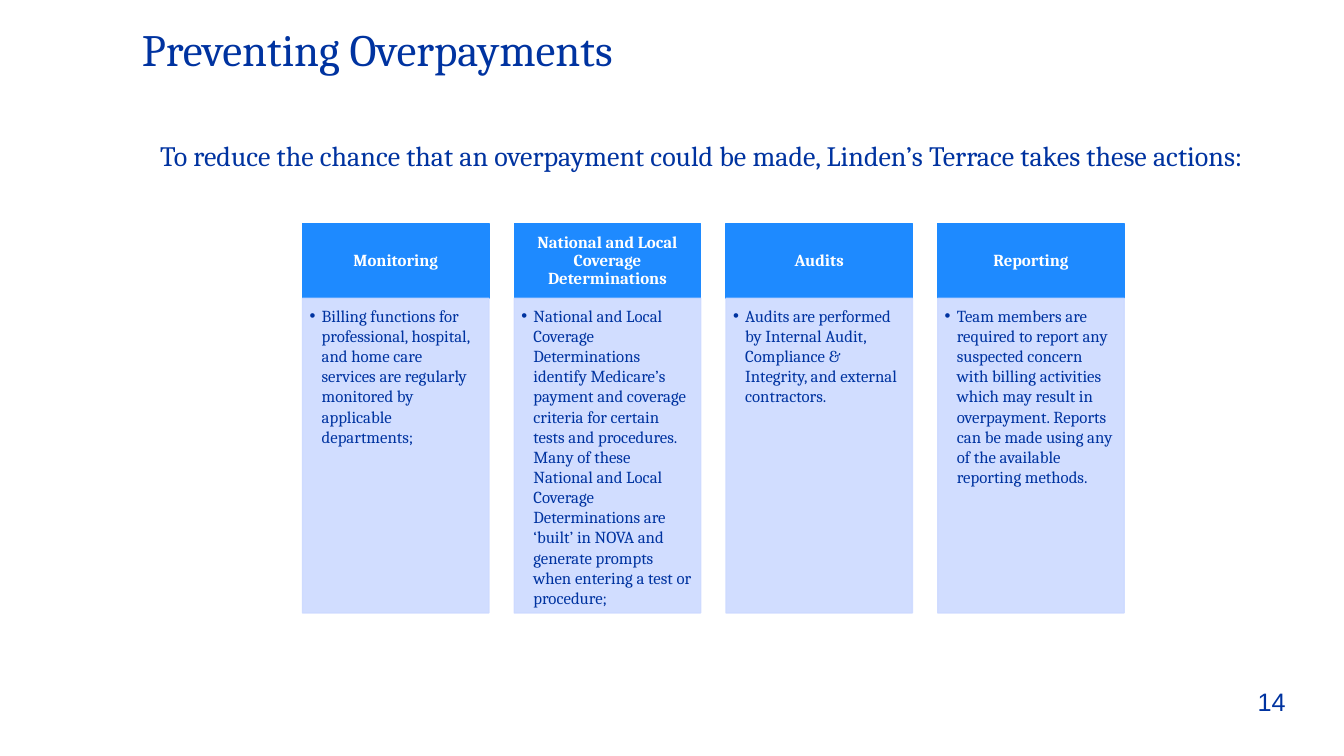
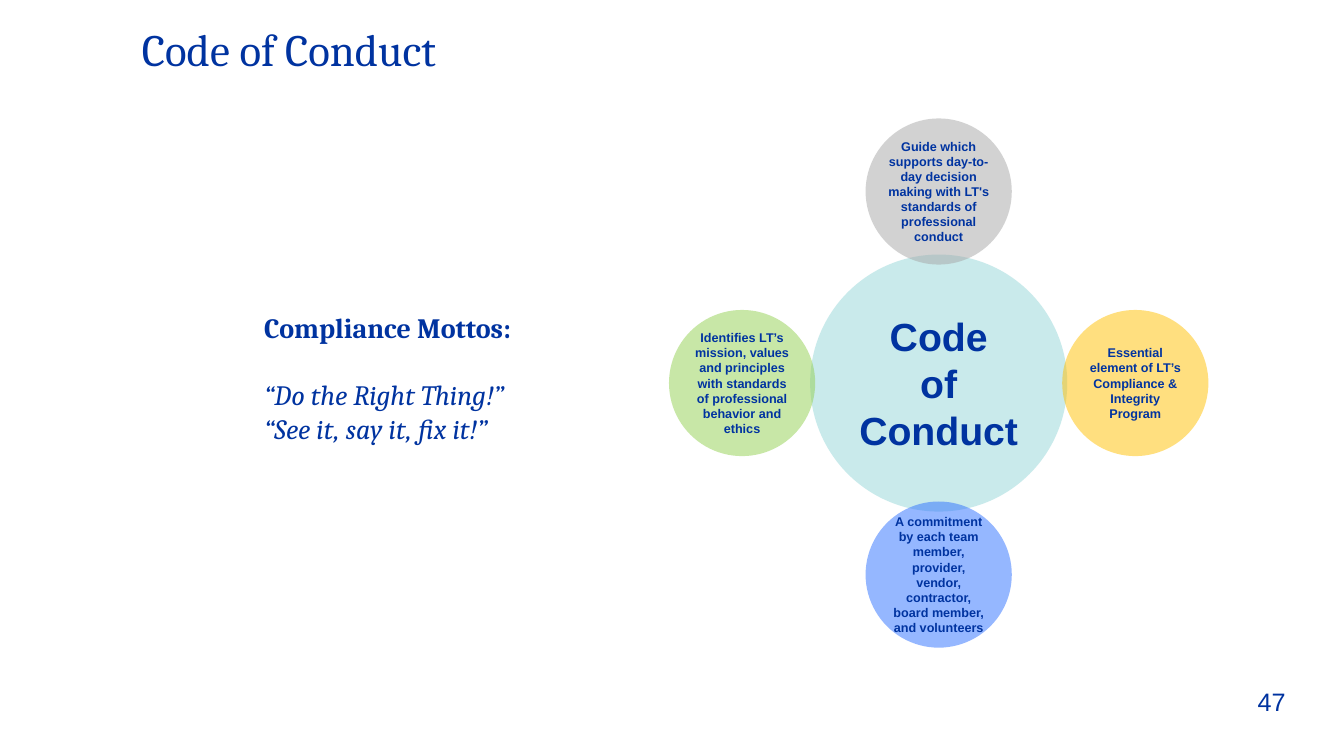
from dataclasses import dataclass

from lxml import etree
from pptx import Presentation
from pptx.dml.color import RGBColor
from pptx.enum.shapes import MSO_SHAPE
from pptx.enum.text import MSO_ANCHOR, PP_ALIGN
from pptx.oxml.ns import qn
from pptx.util import Inches, Pt

RECTANGLE, OVAL = MSO_SHAPE.RECTANGLE, MSO_SHAPE.OVAL
TOP, MIDDLE = MSO_ANCHOR.TOP, MSO_ANCHOR.MIDDLE
LEFT, CENTER, RIGHT = PP_ALIGN.LEFT, PP_ALIGN.CENTER, PP_ALIGN.RIGHT


@dataclass(frozen=True)
class Theme:
    """Colours, fonts and type sizes of the deck."""
    ink: str = "0033A0"
    white: str = "FFFFFF"
    header: str = "1E8AFF"
    panel: str = "CDDAFF"
    hub: str = "94D7D9"
    grey: str = "A6A6A6"
    gold: str = "FFC000"
    blue: str = "2D70FF"
    green: str = "92D050"
    serif: str = "Cambria"
    sans: str = "Arial"
    title: int = 32
    hub_size: int = 28
    lead: int = 20
    number: int = 18
    card: int = 12
    satellite: int = 9


THEME = Theme()
TEXT_INSETS = (0.1, 0.05, 0.1, 0.05)
HEADER_INSETS = (0.09, 0.05, 0.09, 0.05)
PANEL_INSETS = (0.07, 0.07, 0.09, 0.1)

ACTIONS = [
    ("Monitoring",
     "Billing functions for professional, hospital, and home care services are "
     "regularly monitored by applicable departments;"),
    ("National and Local Coverage Determinations",
     "National and Local Coverage Determinations identify Medicare’s payment and "
     "coverage criteria for certain tests and procedures. Many of these National "
     "and Local Coverage Determinations are ‘built’ in NOVA and generate prompts "
     "when entering a test or procedure;"),
    ("Audits",
     "Audits are performed by Internal Audit, Compliance & Integrity, and external "
     "contractors."),
    ("Reporting",
     "Team members are required to report any suspected concern with billing "
     "activities which may result in overpayment. Reports can be made using any of "
     "the available reporting methods."),
]

SATELLITES = [
    (0, -1, THEME.grey,
     "Guide which supports day-to-day decision making with LT's standards of "
     "professional conduct"),
    (1, 0, THEME.gold, "Essential element of LT’s Compliance & Integrity Program"),
    (0, 1, THEME.blue,
     "A commitment by each team member, provider, vendor, contractor, board member, "
     "and volunteers"),
    (-1, 0, THEME.green,
     "Identifies LT’s mission, values and principles with standards of professional "
     "behavior and ethics"),
]


def set_alpha(color_format, percent):
    """Make a solid colour partly transparent."""
    color = color_format._xFill.find(qn("a:srgbClr"))
    etree.SubElement(color, qn("a:alpha")).set("val", str(percent * 1000))


def paint(fill, color, alpha=100):
    """Give a fill a solid colour and an opacity in percent."""
    fill.solid()
    fill.fore_color.rgb = RGBColor.from_string(color)
    if alpha < 100:
        set_alpha(fill.fore_color, alpha)


def add_bullet(para, indent):
    """Put a hanging bullet on a paragraph."""
    properties = para._p.get_or_add_pPr()
    properties.set("marL", str(Inches(indent)))
    properties.set("indent", str(-Inches(indent)))
    etree.SubElement(properties, qn("a:buFont")).set("typeface", THEME.sans)
    etree.SubElement(properties, qn("a:buChar")).set("char", "•")


def write(para, text, size, font=THEME.serif, color=THEME.ink, bold=False, italic=False,
          align=LEFT, spacing=None, before=0, bullet=0):
    """Write formatted text into a paragraph."""
    if bullet:
        add_bullet(para, bullet)
    if before:
        para.space_before = Pt(before)
    if spacing:
        para.line_spacing = spacing
    para.alignment = align
    span = para.add_run()
    span.text = text
    span.font.size = Pt(size)
    span.font.name = font
    span.font.bold = bold
    span.font.italic = italic
    span.font.color.rgb = RGBColor.from_string(color)


def prepare_frame(box, insets, anchor):
    """Set wrapping, insets and anchor, and return the text frame."""
    frame = box.text_frame
    frame.word_wrap = True
    frame.vertical_anchor = anchor
    (frame.margin_left, frame.margin_top,
     frame.margin_right, frame.margin_bottom) = map(Inches, insets)
    return frame


def add_text(page, place, text, size, anchor=TOP, **style):
    """Add a text box with one paragraph and return its frame."""
    box = page.shapes.add_textbox(*map(Inches, place))
    frame = prepare_frame(box, TEXT_INSETS, anchor)
    write(frame.paragraphs[0], text, size, **style)
    return frame


def add_block(page, kind, place, color, alpha=100, outlined=False,
              insets=TEXT_INSETS, anchor=MIDDLE):
    """Add a filled shape and return its text frame."""
    block = page.shapes.add_shape(kind, *map(Inches, place))
    block.shadow.inherit = False
    paint(block.fill, color, alpha)
    if outlined:
        block.line.width = Pt(1)
        paint(block.line.fill, color, alpha)
    else:
        block.line.fill.background()
    return prepare_frame(block, insets, anchor)


def add_circle(page, center_x, center_y, diameter, color, inset):
    """Add a half transparent circle around a centre and return its frame."""
    place = (center_x - diameter / 2, center_y - diameter / 2, diameter, diameter)
    return add_block(page, OVAL, place, color, alpha=50, insets=(inset,) * 4)


def add_page(deck, title, number):
    """Add a blank slide with its title and page number."""
    page = deck.slides.add_slide(deck.slide_layouts[6])
    add_text(page, (1.31, 0.19, 11.7, 0.65), title, THEME.title,
             anchor=MIDDLE, spacing=0.9)
    add_text(page, (12.09, 6.76, 0.76, 0.4), number, THEME.number,
             font=THEME.sans, align=RIGHT)
    return page


def add_action(page, left, heading, detail):
    """Add a column with a heading and a bulleted panel."""
    width, top, header_height = 1.85, 2.22, 0.74
    header = add_block(page, RECTANGLE, (left, top, width, header_height), THEME.header,
                       outlined=True, insets=HEADER_INSETS)
    write(header.paragraphs[0], heading, THEME.card, color=THEME.white, bold=True,
          align=CENTER, spacing=0.9)
    panel = add_block(page, RECTANGLE, (left, top + header_height, width, 3.12),
                      THEME.panel, alpha=90, outlined=True, insets=PANEL_INSETS, anchor=TOP)
    write(panel.paragraphs[0], detail, THEME.card, bullet=0.12)


def build_overpayments(deck):
    """Build the slide on preventing overpayments."""
    page = add_page(deck, "Preventing Overpayments", "14")
    add_text(page, (1.49, 1.32, 11.3, 0.77),
             "To reduce the chance that an overpayment could be made, "
             "Linden’s Terrace takes these actions:", THEME.lead)
    for index, (heading, detail) in enumerate(ACTIONS):
        add_action(page, 3 + index * 2.1, heading, detail)


def build_conduct(deck):
    """Build the slide on the code of conduct."""
    page = add_page(deck, "Code of Conduct", "47")
    center_x, center_y, reach_x, reach_y = 9.31, 3.8, 1.95, 1.9
    hub = add_circle(page, center_x, center_y, 2.55, THEME.hub, 0.04)
    bold_sans = {"font": THEME.sans, "bold": True, "align": CENTER}
    write(hub.paragraphs[0], "Code", THEME.hub_size, **bold_sans)
    for word in ("of", "Conduct"):
        write(hub.add_paragraph(), word, THEME.hub_size, **bold_sans)
    for across, down, color, text in SATELLITES:
        satellite = add_circle(page, center_x + across * reach_x,
                               center_y + down * reach_y, 1.45, color, 0.01)
        write(satellite.paragraphs[0], text, THEME.satellite, **bold_sans)
    mottos = add_text(page, (2.52, 3.03, 3.81, 1.45), "Compliance Mottos:",
                      THEME.lead, bold=True)
    write(mottos.add_paragraph(), "“Do the Right Thing!”", THEME.lead,
          italic=True, before=24)
    write(mottos.add_paragraph(), "“See it, say it, fix it!”", THEME.lead, italic=True)


def main():
    """Build and save the deck."""
    deck = Presentation()
    deck.slide_width, deck.slide_height = Inches(13.33), Inches(7.5)
    build_overpayments(deck)
    build_conduct(deck)
    deck.save("out.pptx")


if __name__ == "__main__":
    main()
